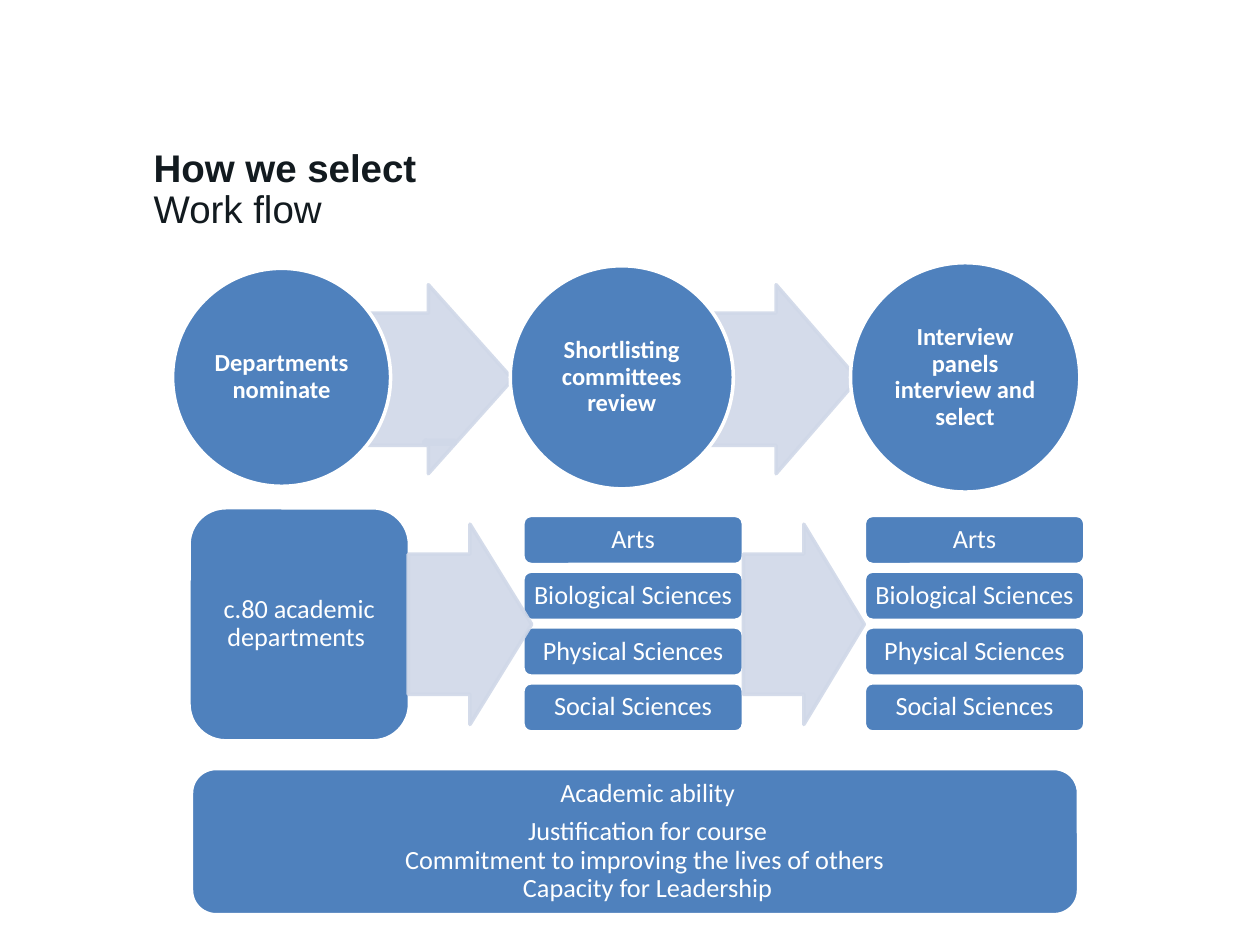
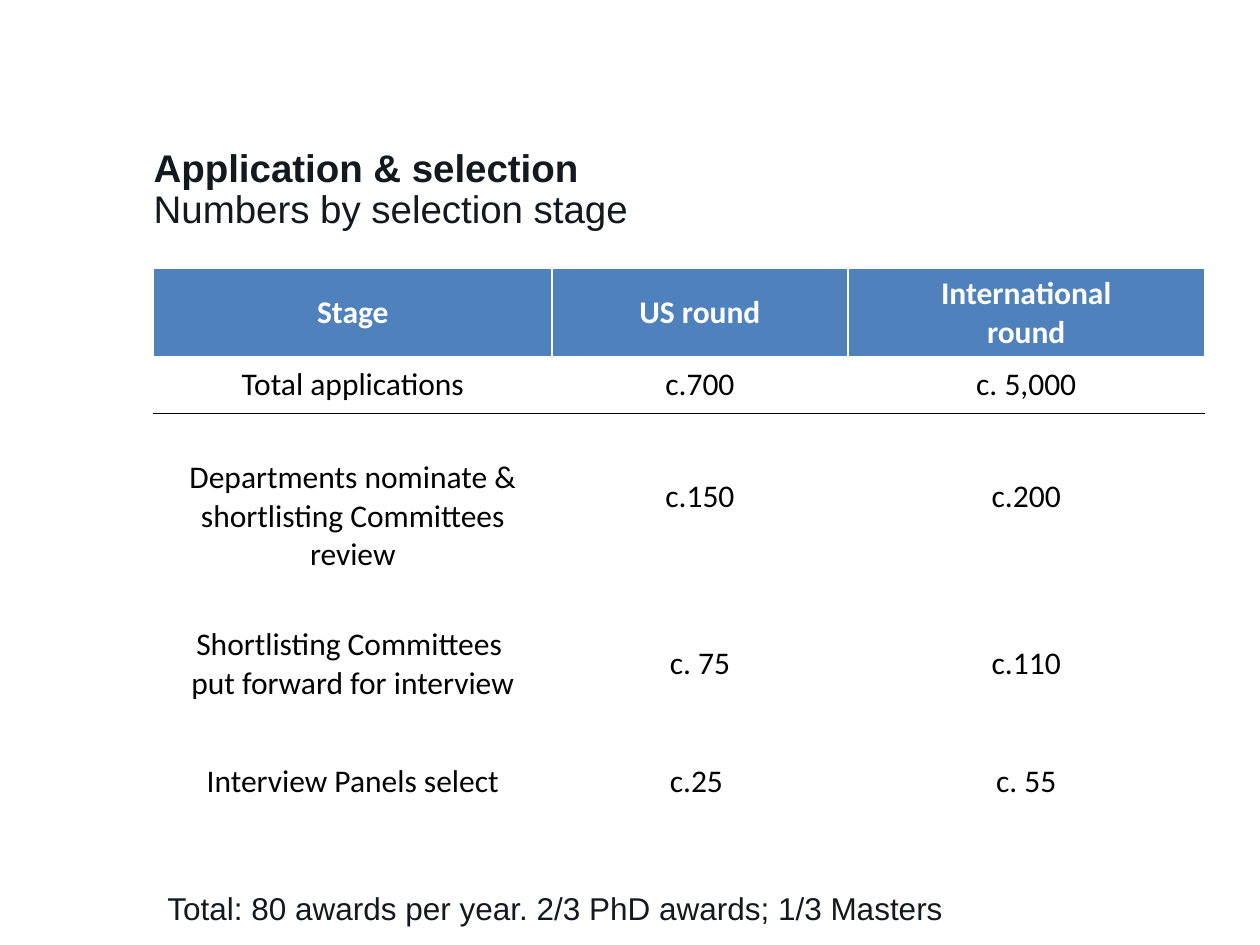
from dataclasses import dataclass

from lxml.etree import SubElement
from pptx import Presentation
from pptx.dml.color import RGBColor
from pptx.enum.shapes import MSO_SHAPE
from pptx.enum.text import MSO_ANCHOR, PP_ALIGN
from pptx.oxml import parse_xml
from pptx.oxml.ns import nsdecls, qn
from pptx.util import Inches, Pt

COLOURS = {
    "blue": "4F81BD",
    "pale": "D0D8E8",
    "ink": "121A1F",
    "white": "FFFFFF",
    "black": "000000",
}
GRID = 0.1
DIVISIONS = ["Arts", "Biological Sciences", "Physical Sciences", "Social Sciences"]


@dataclass
class Box:
    """A rectangle in grid columns and rows, 100 by 75 to the slide."""

    left: float
    top: float
    width: float
    height: float

    def inside(self, left, top, width, height):
        """Return a box placed relative to this one."""
        return Box(self.left + left, self.top + top, width, height)

    def lengths(self):
        """Return left, top, width and height as slide lengths."""
        sides = (self.left, self.top, self.width, self.height)
        return [Inches(side * GRID) for side in sides]


HEADING = Box(12.2, 11.1, 51.9, 7.3)
STAGES = Box(13.7, 20.9, 72.1, 18.1)
BODIES = Box(15, 40.3, 71.1, 18.5)
CRITERIA = Box(15.2, 61, 70.4, 11.6)
NUMBERS = Box(12.2, 21.3, 83.4, 47.8)
TOTAL = Box(12.3, 69.6, 87.1, 4)


def colour(name):
    """Return the named colour."""
    return RGBColor.from_string(COLOURS[name])


def write(para, text, size, face, ink, bold=False):
    """Add text to a paragraph, one run for each line."""
    for number, line in enumerate(text.split("\n")):
        if number:
            para.add_line_break()
        span = para.add_run()
        span.text = line
        span.font.size = Pt(size)
        span.font.name = face
        span.font.bold = bold
        span.font.color.rgb = colour(ink)


def set_insets(frame, inset):
    """Give all four sides of a text frame the same inset in inches."""
    frame.margin_left = frame.margin_right = Inches(inset)
    frame.margin_top = frame.margin_bottom = Inches(inset)


def add_label(page, box, text, size=22, bold=False, inset=0.0):
    """Add a left-aligned line of dark text."""
    frame = page.shapes.add_textbox(*box.lengths()).text_frame
    frame.word_wrap = True
    set_insets(frame, inset)
    write(frame.paragraphs[0], text, size, "Arial", "ink", bold)


def add_heading(page, box, title, subtitle):
    """Add the bold title with its subtitle below."""
    add_label(page, box.inside(0, 0.3, box.width, 4), title, bold=True)
    add_label(page, box.inside(0, 3.6, box.width, 4), subtitle)


def add_outline(page, kind, box, fill, line):
    """Add a filled preset shape with a two-point line."""
    shape = page.shapes.add_shape(kind, *box.lengths())
    shape.shadow.inherit = False
    shape.fill.solid()
    shape.fill.fore_color.rgb = colour(fill)
    shape.line.color.rgb = colour(line)
    shape.line.width = Pt(2)
    return shape


def add_block(page, kind, box, texts, size=15, bold=False, inset=0.04):
    """Add a blue shape with centred white paragraphs."""
    shape = add_outline(page, kind, box, "blue", "white")
    frame = shape.text_frame
    frame.word_wrap = True
    frame.vertical_anchor = MSO_ANCHOR.MIDDLE
    set_insets(frame, inset)
    for number, text in enumerate(texts):
        para = frame.add_paragraph() if number else frame.paragraphs[0]
        para.alignment = PP_ALIGN.CENTER
        para.line_spacing = 0.9
        if number:
            para.space_before = Pt(5.5)
        write(para, text, size, "Calibri", "white", bold)
    return shape


def add_arrow(page, box):
    """Add a pale, slightly transparent block arrow."""
    arrow = add_outline(page, MSO_SHAPE.RIGHT_ARROW, box, "pale", "pale")
    arrow.adjustments[0] = 0.7
    arrow.adjustments[1] = 0.5
    for tint in arrow.element.spPr.iter(qn("a:srgbClr")):
        SubElement(tint, qn("a:alpha")).set("val", "90000")
    return arrow


def add_stages(page, box):
    """Add the three selection stages, joined by arrows."""
    for left, width in [(13.6, 13.4), (41.4, 13)]:
        add_arrow(page, box.inside(left, 1.7, width, 15))
    add_arrow(page, box.inside(19.9, 14, 2.5, 0.4)).rotation = 180
    stages = [
        (0, 17.3, "Departments nominate"),
        (26.8, 17.7, "Shortlisting committees review"),
        (53.8, 18.2, "Interview panels interview and select"),
    ]
    for left, size, text in stages:
        circle = box.inside(left, (box.height - size) / 2, size, size)
        add_block(page, MSO_SHAPE.OVAL, circle, [text], 14, True, 0.01)


def add_bodies(page, box):
    """Add the departments and the two columns of divisions."""
    add_block(page, MSO_SHAPE.ROUNDED_RECTANGLE, box.inside(0, 0, 17.5, box.height),
              ["c.80 academic departments "], inset=0.06)
    for left in (26.5, 53.6):
        for row, division in enumerate(DIVISIONS):
            bar = box.inside(left, 0.6 + row * 4.43, 17.5, 3.9)
            add_block(page, MSO_SHAPE.ROUNDED_RECTANGLE, bar, [division])
    for left, width in [(17.4, 9.8), (44, 9.6)]:
        add_arrow(page, box.inside(left, 1.3, width, 15.9))


def add_criteria(page, box):
    """Add the band of selection criteria."""
    texts = [
        "Academic ability",
        "Justification for course\n"
        "Commitment to improving the lives of others \n"
        "Capacity for Leadership",
    ]
    band = add_block(page, MSO_SHAPE.ROUNDED_RECTANGLE, box, texts)
    band.text_frame.margin_left = Inches(0.24)


def set_borders(cell, top, bottom):
    """Draw white cell sides with the given top and bottom colours."""
    sides = [("L", "white"), ("R", "white"), ("T", top), ("B", bottom)]
    for position, (side, name) in enumerate(sides):
        border = parse_xml(
            f'<a:ln{side} {nsdecls("a")} w="12700"><a:solidFill>'
            f'<a:srgbClr val="{COLOURS[name]}"/></a:solidFill></a:ln{side}>'
        )
        cell._tc.get_or_add_tcPr().insert(position, border)


def add_numbers(page, box):
    """Add the table of numbers at each selection stage."""
    rows = [
        (6.9, ["Stage", "US round", "International|round"]),
        (4.5, ["Total applications", "c.700", "c. 5,000"]),
        (13.3, ["Departments nominate & shortlisting Committees review",
                "c.150", "c.200"]),
        (13.2, ["Shortlisting Committees |put forward for interview",
                "c. 75", "c.110"]),
        (5.5, ["Interview Panels select", "c.25 ", "c. 55"]),
        (4.4, ["", "", ""]),
    ]
    table = page.shapes.add_table(len(rows), 3, *box.lengths()).table
    table.horz_banding = False
    for column, width in zip(table.columns, (31.6, 23.5, 28.3)):
        column.width = Inches(width * GRID)
    for row, (height, texts) in enumerate(rows):
        table.rows[row].height = Inches(height * GRID)
        header = row == 0
        for column, text in enumerate(texts):
            cell = table.cell(row, column)
            cell.vertical_anchor = MSO_ANCHOR.MIDDLE
            cell.fill.solid()
            cell.fill.fore_color.rgb = colour("blue" if header else "white")
            set_borders(cell, "black" if row == 2 else "white",
                        "black" if row == 1 else "white")
            for number, line in enumerate(text.split("|")):
                frame = cell.text_frame
                para = frame.add_paragraph() if number else frame.paragraphs[0]
                para.alignment = PP_ALIGN.CENTER
                if line:
                    write(para, line, 18, "Calibri",
                          "white" if header else "black", header)
    table.cell(2, 0).margin_top = Inches(0.36)


def add_page(deck, title, subtitle):
    """Add a blank white slide with its heading."""
    page = deck.slides.add_slide(deck.slide_layouts[6])
    page.background.fill.solid()
    page.background.fill.fore_color.rgb = colour("white")
    add_heading(page, HEADING, title, subtitle)
    return page


def main():
    """Build and save the deck."""
    deck = Presentation()
    deck.slide_width = Inches(10)
    deck.slide_height = Inches(7.5)

    page = add_page(deck, "How we select", "Work flow")
    add_criteria(page, CRITERIA)
    add_stages(page, STAGES)
    add_bodies(page, BODIES)

    page = add_page(deck, "Application & selection", "Numbers by selection stage")
    add_numbers(page, NUMBERS)
    add_label(page, TOTAL, "Total: 80 awards per year. 2/3 PhD awards; 1/3 Masters",
              size=18, inset=0.1)
    deck.save("out.pptx")


if __name__ == "__main__":
    main()
